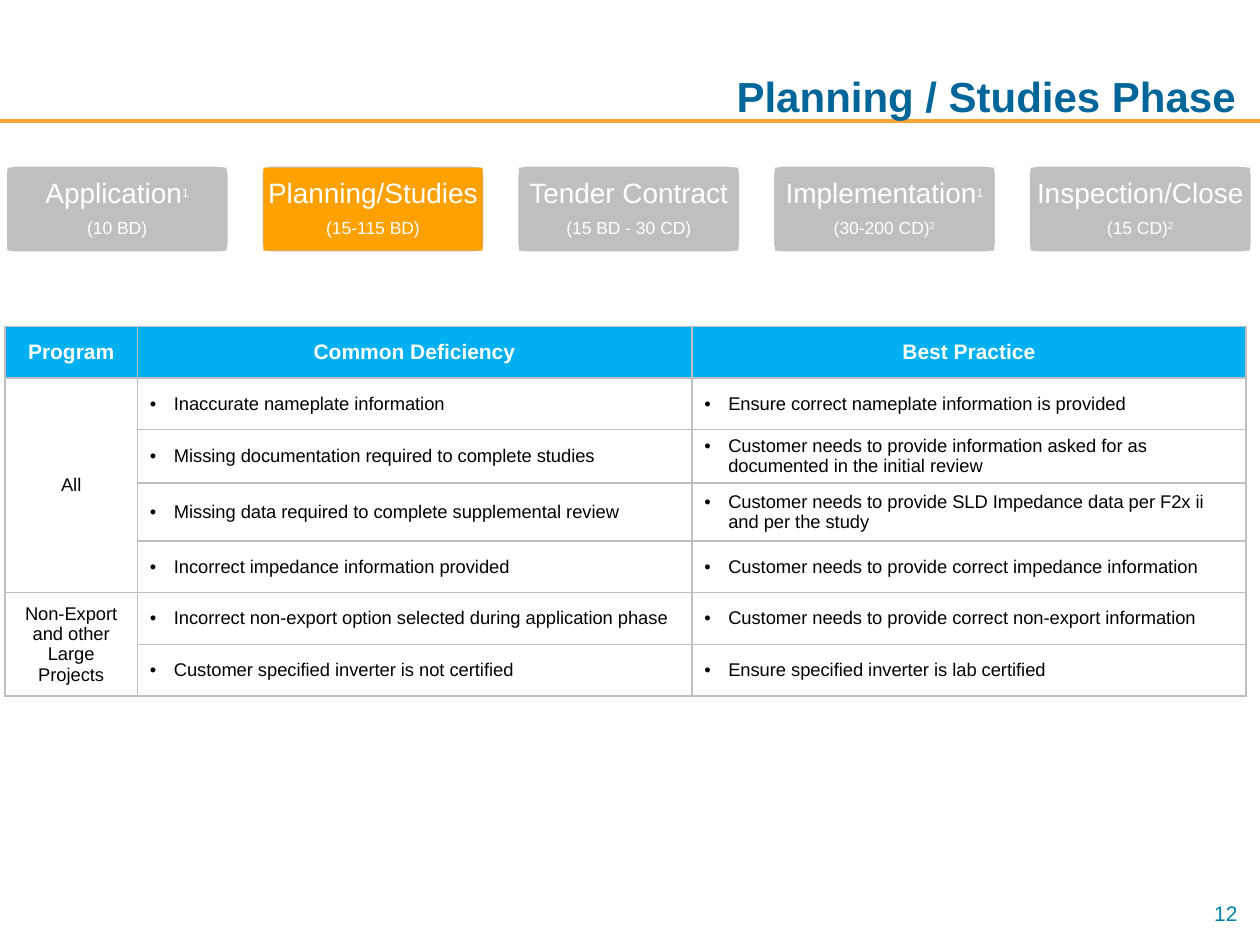
from dataclasses import dataclass

import lxml.etree
import pptx
import pptx.dml.color
import pptx.enum.shapes
import pptx.enum.text
import pptx.oxml
import pptx.oxml.ns
import pptx.util

Inches = pptx.util.Inches
Pt = pptx.util.Pt
ALIGN = pptx.enum.text.PP_ALIGN
ANCHOR = pptx.enum.text.MSO_ANCHOR
SHAPE = pptx.enum.shapes.MSO_SHAPE

COLORS = {
    "title": "006699",
    "rule": "FAA534",
    "inactive": "BFBFBF",
    "active": "FFA100",
    "header": "00B0F0",
    "border": "BFBFBF",
    "number": "0082AA",
    "white": "FFFFFF",
    "black": "000000",
}


@dataclass
class Phase:
    name: str
    duration: str
    name_note: str = ""
    duration_note: str = ""
    color: str = "inactive"


@dataclass
class Practice:
    deficiency: str
    remedy: str


@dataclass
class Program:
    name: str
    practices: list[Practice]


PHASES = [
    Phase("Application", "(10 BD)", name_note="1"),
    Phase("Planning/Studies", "(15-115 BD)", color="active"),
    Phase("Tender Contract", "(15 BD - 30 CD)"),
    Phase("Implementation", "(30-200 CD)", name_note="1", duration_note="2"),
    Phase("Inspection/Close", "(15 CD)", duration_note="2"),
]

HEADERS = ["Program", "Common Deficiency", "Best Practice"]
PROGRAMS = [
    Program("All", [
        Practice("Inaccurate nameplate information",
                 "Ensure correct nameplate information is provided"),
        Practice("Missing documentation required to complete studies",
                 "Customer needs to provide information asked for as documented in the initial review"),
        Practice("Missing data required to complete supplemental review",
                 "Customer needs to provide SLD Impedance data per F2x ii and per the study"),
        Practice("Incorrect impedance information provided",
                 "Customer needs to provide correct impedance information"),
    ]),
    Program("Non-Export\nand other Large Projects", [
        Practice("Incorrect non-export option selected during application phase",
                 "Customer needs to provide correct non-export information"),
        Practice("Customer specified inverter is not certified",
                 "Ensure specified inverter is lab certified"),
    ]),
]
COLUMN_WIDTHS = [1.05, 4.4, 4.4]
ROW_HEIGHTS = [0.41, 0.41, 0.42, 0.46, 0.41, 0.41, 0.41]


def rgb(name: str) -> pptx.dml.color.RGBColor:
    return pptx.dml.color.RGBColor.from_string(COLORS[name])


def style(para, size: float, color: str, align=ALIGN.LEFT, bold: bool = False) -> None:
    para.alignment = align
    para.font.name = "Arial"
    para.font.size = Pt(size)
    para.font.bold = bold
    para.font.color.rgb = rgb(color)


def add_title(page) -> None:
    title = page.shapes.title
    title.left, title.top = Inches(1.38), Inches(0.33)
    title.width, title.height = Inches(8.53), Inches(0.68)
    title.text_frame.text = "Planning / Studies Phase"
    title.text_frame.auto_size = pptx.enum.text.MSO_AUTO_SIZE.NONE
    title.text_frame.vertical_anchor = ANCHOR.BOTTOM
    style(title.text_frame.paragraphs[0], 24, "title", ALIGN.RIGHT, True)


def add_rule(page) -> None:
    rule = page.shapes.add_connector(
        pptx.enum.shapes.MSO_CONNECTOR.STRAIGHT, 0, Inches(0.96), Inches(10), Inches(0.96))
    rule.line.color.rgb = rgb("rule")
    rule.line.width = Pt(2)
    lxml.etree.SubElement(rule._element.spPr, pptx.oxml.ns.qn("a:effectLst"))
    page.shapes.title._element.addprevious(rule._element)


def write_line(para, text: str, note: str, size: float, note_size: float) -> None:
    style(para, size, "white", ALIGN.CENTER)
    para.line_spacing = 0.9
    para.space_after = Pt(size * 0.35)
    para.add_run().text = text
    if note:
        span = para.add_run()
        span.text = note
        span.font.size = Pt(note_size)
        span._r.get_or_add_rPr().set("baseline", "30000")


def add_phase(page, phase: Phase, left: float) -> None:
    group = page.shapes.add_group_shape()
    frame = group.shapes.add_shape(
        SHAPE.ROUNDED_RECTANGLE, Inches(left), Inches(1.31), Inches(1.78), Inches(0.7))
    frame.adjustments[0] = 0.1
    frame.line.color.rgb = rgb("white")
    frame.line.width = Pt(2)
    label = group.shapes.add_shape(
        SHAPE.RECTANGLE, Inches(left + 0.02), Inches(1.33), Inches(1.74), Inches(0.66))
    label.line.fill.background()
    for box, color in ((frame, "inactive"), (label, phase.color)):
        box.shadow.inherit = False
        box.fill.solid()
        box.fill.fore_color.rgb = rgb(color)
    text = label.text_frame
    text.word_wrap = True
    text.vertical_anchor = ANCHOR.MIDDLE
    text.margin_left = text.margin_right = Inches(0.02)
    text.margin_top = text.margin_bottom = Inches(0.02)
    write_line(text.paragraphs[0], phase.name, phase.name_note, 16, 12)
    write_line(text.add_paragraph(), phase.duration, phase.duration_note, 10, 10)


def add_borders(cell) -> None:
    properties = cell._tc.get_or_add_tcPr()
    for index, side in enumerate(("lnL", "lnR", "lnT", "lnB")):
        properties.insert(index, pptx.oxml.parse_xml(
            f'<a:{side} {pptx.oxml.ns.nsdecls("a")} w="12700"><a:solidFill>'
            f'<a:srgbClr val="{COLORS["border"]}"/></a:solidFill></a:{side}>'))


def add_bullet(para) -> None:
    properties = para._p.get_or_add_pPr()
    properties.set("marL", str(Inches(0.19)))
    properties.set("indent", str(-Inches(0.19)))
    for tag, key, value in (("a:buFont", "typeface", "Arial"), ("a:buChar", "char", "•")):
        lxml.etree.SubElement(properties, pptx.oxml.ns.qn(tag)).set(key, value)


def fill_cell(cell, text: str, header: bool = False, bulleted: bool = False) -> None:
    cell.text = text
    cell.vertical_anchor = ANCHOR.MIDDLE
    for para in cell.text_frame.paragraphs:
        if bulleted:
            add_bullet(para)
        style(para, 12 if header else 10.5, "white" if header else "black",
              ALIGN.LEFT if bulleted else ALIGN.CENTER, header)


def add_practice_table(page) -> None:
    table = page.shapes.add_table(
        len(ROW_HEIGHTS), len(COLUMN_WIDTHS), Inches(0.04), Inches(2.59),
        Inches(sum(COLUMN_WIDTHS)), Inches(sum(ROW_HEIGHTS))).table
    for column, width in zip(table.columns, COLUMN_WIDTHS):
        column.width = Inches(width)
    for index, (row, height) in enumerate(zip(table.rows, ROW_HEIGHTS)):
        row.height = Inches(height)
        for cell in row.cells:
            cell.fill.solid()
            cell.fill.fore_color.rgb = rgb("white" if index else "header")
            add_borders(cell)
    for index, header in enumerate(HEADERS):
        fill_cell(table.cell(0, index), header, header=True)
    first = 1
    for program in PROGRAMS:
        last = first + len(program.practices) - 1
        table.cell(first, 0).merge(table.cell(last, 0))
        fill_cell(table.cell(first, 0), program.name)
        for index, practice in enumerate(program.practices, first):
            fill_cell(table.cell(index, 1), practice.deficiency, bulleted=True)
            fill_cell(table.cell(index, 2), practice.remedy, bulleted=True)
        first = last + 1


def add_page_number(page) -> None:
    box = page.shapes.add_textbox(Inches(7.59), Inches(7.1), Inches(2.33), Inches(0.4))
    box.text_frame.word_wrap = True
    box.text_frame.text = "12"
    style(box.text_frame.paragraphs[0], 12, "number", ALIGN.RIGHT)


def main() -> None:
    deck = pptx.Presentation()
    deck.slide_width, deck.slide_height = Inches(10), Inches(7.5)
    page = deck.slides.add_slide(deck.slide_layouts[5])
    add_rule(page)
    add_title(page)
    add_practice_table(page)
    add_page_number(page)
    for index, phase in enumerate(PHASES):
        add_phase(page, phase, 0.04 + 2.03 * index)
    deck.save("out.pptx")


if __name__ == "__main__":
    main()
